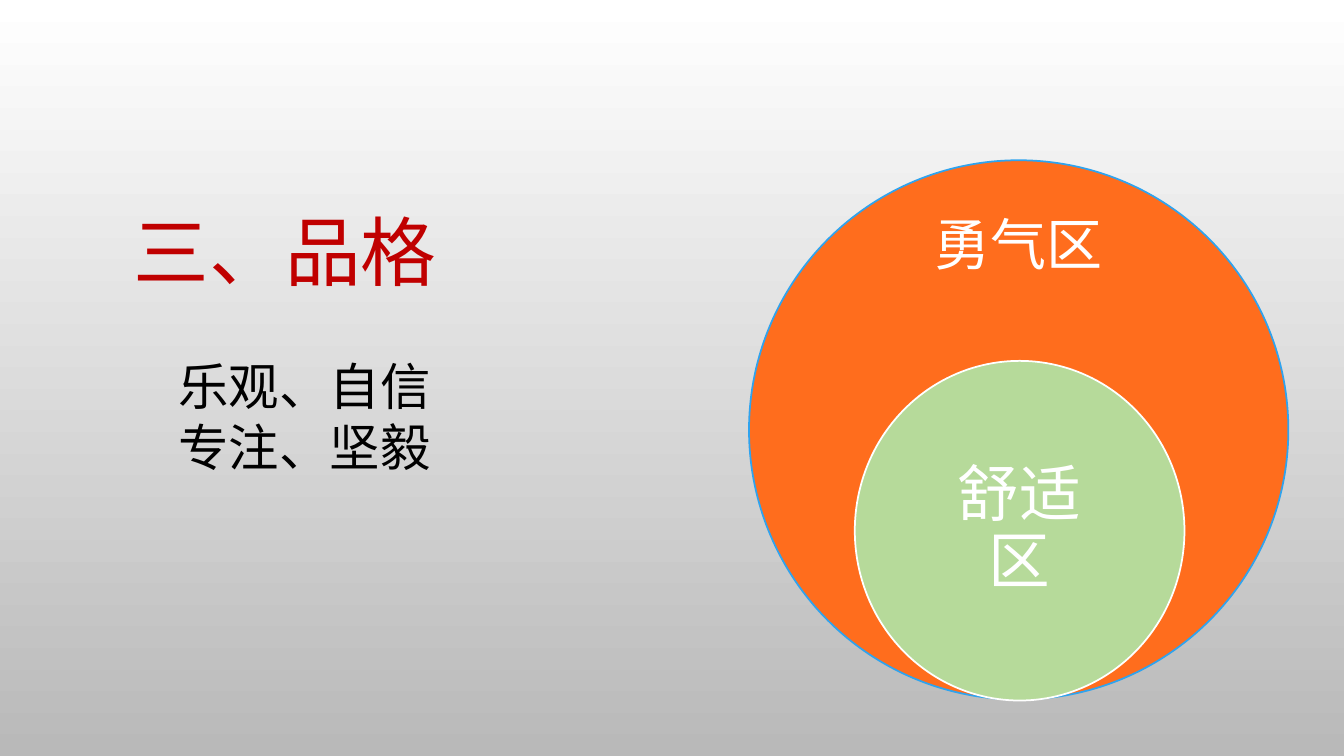
from pptx import Presentation
from pptx import util as u
from pptx.dml.color import RGBColor
from pptx.enum import shapes, text

COLORS = {
    "top": "FFFFFF", "bottom": "B9B9B9",
    "courage": "FF6D1D", "courage_edge": "2FA3EE",
    "comfort": "B6DA9A", "white": "FFFFFF",
    "heading": "C00000", "body": "000000",
}


def color(name):
    return RGBColor.from_string(COLORS[name])


class SlideBuilder:
    """Places elements by percentages of the slide's width and height."""

    def __init__(self, deck):
        self.width, self.height = deck.slide_width, deck.slide_height
        self.slide = deck.slides.add_slide(deck.slide_layouts[6])

    def place(self, left, top, width, height):
        return (int(self.width * left / 100), int(self.height * top / 100),
                int(self.width * width / 100), int(self.height * height / 100))

    def background(self, *names):
        fill = self.slide.background.fill
        fill.gradient()
        fill.gradient_angle = 270
        for stop, name in zip(fill.gradient_stops, names):
            stop.color.rgb = color(name)

    def zone(self, area, fill, edge):
        circle = self.slide.shapes.add_shape(
            shapes.MSO_SHAPE.OVAL, *self.place(*area))
        circle.shadow.inherit = False
        circle.fill.solid()
        circle.fill.fore_color.rgb = color(fill)
        circle.line.color.rgb = color(edge)
        circle.line.width = u.Pt(1.25)

    def text_frame(self, area, words):
        frame = self.slide.shapes.add_textbox(*self.place(*area)).text_frame
        frame.word_wrap = True
        frame.text = words
        return frame

    def style(self, paragraph, font, size, name):
        for run in paragraph.runs:
            run.font.name = font
            run.font.size = u.Pt(size)
            run.font.color.rgb = color(name)

    def zone_label(self, area, words, size, inset):
        frame = self.text_frame(area, words)
        frame.vertical_anchor = text.MSO_ANCHOR.MIDDLE
        frame.margin_left = frame.margin_right = u.Inches(inset)
        frame.margin_top = frame.margin_bottom = u.Inches(inset)
        label = frame.paragraphs[0]
        label.alignment = text.PP_ALIGN.CENTER
        label.line_spacing = 0.9
        self.style(label, "Lato", size, "white")

    def topic(self, area, heading, traits):
        """Adds a heading with indented lines a gap below it."""
        frame = self.text_frame(area, "\n".join([heading, *traits]))
        title, *lines = frame.paragraphs
        self.style(title, "Cabin", 54, "heading")
        lines[0].space_before = u.Pt(43)
        for line in lines:
            line._p.get_or_add_pPr().set("marL", str(u.Inches(0.44)))
            self.style(line, "Cabin", 36, "body")


def main():
    deck = Presentation()
    deck.slide_width, deck.slide_height = u.Inches(13.33), u.Inches(7.5)
    page = SlideBuilder(deck)
    page.background("top", "bottom")
    page.zone((55.73, 21.2, 40.13, 71.33), "courage", "courage_edge")
    page.zone_label((65.25, 26.67, 21.08, 12.13), "勇气区", 40, 0.31)
    page.zone((63.6, 47.73, 24.53, 44.93), "comfort", "white")
    page.zone_label((67.2, 58.93, 17.33, 22.4), "舒适区", 44, 0.34)
    page.topic((9.23, 26.4, 29.85, 41.73), "三、品格",
               ["乐观、自信", "专注、坚毅"])
    deck.save("out.pptx")


if __name__ == "__main__":
    main()
